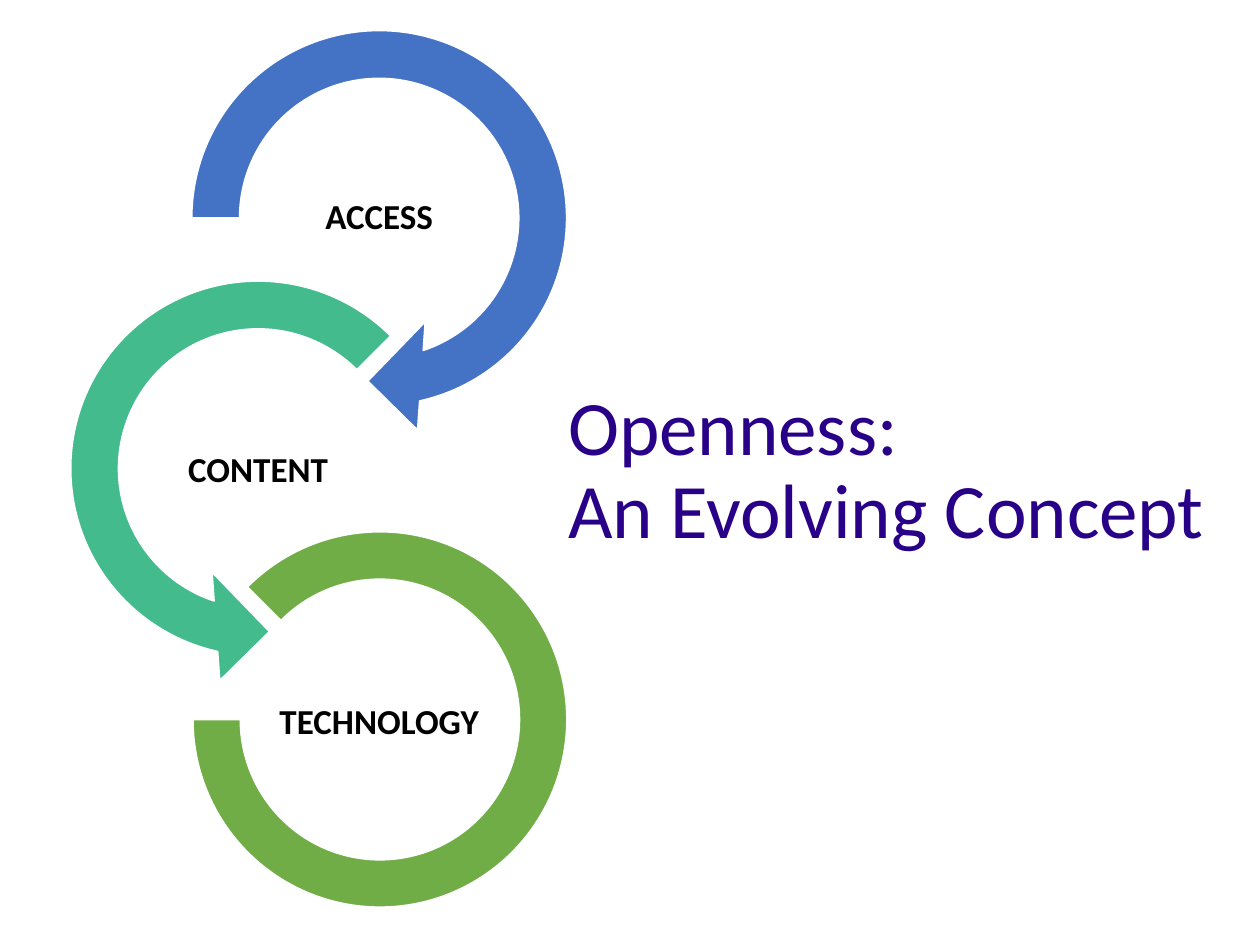
from pptx import Presentation
from pptx.dml.color import RGBColor
from pptx.enum.shapes import MSO_SHAPE as SHAPE
from pptx.enum.text import MSO_ANCHOR as ANCHOR, PP_ALIGN as ALIGN
from pptx.util import Cm, Pt

BLUE = RGBColor(0x44, 0x72, 0xC4)
TEAL = RGBColor(0x43, 0xBB, 0x8D)
GREEN = RGBColor(0x70, 0xAD, 0x47)
WHITE = RGBColor(0xFF, 0xFF, 0xFF)
BLACK = RGBColor(0, 0, 0)
INDIGO = RGBColor(0x29, 0x00, 0x88)
FONT = "Calibri"

ARROW_SIZE = (8.79, 8.79)
ARC_SIZE = (7.54, 7.57)
LABEL_W, LABEL_H, LABEL_STEP = 8.53, 2.44, 5.09
RIGHT, LEFT = 2.44, 0

STAGES = [
    ("ACCESS", RIGHT, SHAPE.CIRCULAR_ARROW, BLUE, (0, 0), ARROW_SIZE,
     (0.11, 11.42, 45, 108, 0.125)),
    ("CONTENT", LEFT, SHAPE.LEFT_CIRCULAR_ARROW, TEAL, (0, 5.05), ARROW_SIZE,
     (0.11, 11.42, 63, 189, 0.125)),
    ("TECHNOLOGY", RIGHT, SHAPE.BLOCK_ARC, GREEN, (0.64, 10.72), ARC_SIZE,
     (135, 108, 0.127)),
]


def style_run(r, size, color, bold=False):
    r.font.name = FONT
    r.font.size = Pt(size)
    r.font.bold = bold
    r.font.color.rgb = color


def add_ring(shapes, kind, x, y, w, h, color, adjustments):
    sp = shapes.add_shape(kind, Cm(x), Cm(y), Cm(w), Cm(h))
    for i, value in enumerate(adjustments):
        sp.adjustments[i] = value
    sp.shadow.inherit = False
    sp.fill.solid()
    sp.fill.fore_color.rgb = color
    sp.line.color.rgb = WHITE
    sp.line.width = Pt(1)


def add_label(shapes, text, x, y):
    tf = shapes.add_textbox(Cm(x), Cm(y), Cm(LABEL_W), Cm(LABEL_H)).text_frame
    tf.word_wrap = True
    tf.vertical_anchor = ANCHOR.MIDDLE
    tf.margin_left = tf.margin_right = Cm(0.03)
    tf.margin_top = tf.margin_bottom = Cm(0.03)
    p = tf.paragraphs[0]
    p.alignment = ALIGN.CENTER
    p.line_spacing = 0.9
    r = p.add_run()
    r.text = text
    style_run(r, 20, BLACK, bold=True)


def add_cycle(slide, x, y):
    shapes = slide.shapes.add_group_shape().shapes
    for i, (text, column, kind, color, offset, size, adj) in enumerate(STAGES):
        dx, dy = offset
        add_ring(shapes, kind, x + column + dx, y + dy, *size, color, adj)
        add_label(shapes, text, x + column + 0.13, y + 3.18 + i * LABEL_STEP)


def set_title(slide, x, y, w, h):
    sp = slide.shapes.title
    sp.left, sp.top, sp.width, sp.height = Cm(x), Cm(y), Cm(w), Cm(h)
    tf = sp.text_frame
    tf.word_wrap = True
    tf.vertical_anchor = ANCHOR.MIDDLE
    p = tf.paragraphs[0]
    p.alignment = ALIGN.LEFT
    p.line_spacing = 0.9
    for i, line in enumerate(("Openness:", "An Evolving Concept")):
        if i:
            p.add_line_break()
        r = p.add_run()
        r.text = line
        style_run(r, 44, INDIGO)


def main():
    prs = Presentation()
    prs.slide_width, prs.slide_height = Cm(25.4), Cm(19.05)
    slide = prs.slides.add_slide(prs.slide_layouts[5])
    add_cycle(slide, 0.81, 0)
    set_title(slide, 11.2, 4.6, 13.51, 9.83)
    prs.save("out.pptx")


if __name__ == "__main__":
    main()
